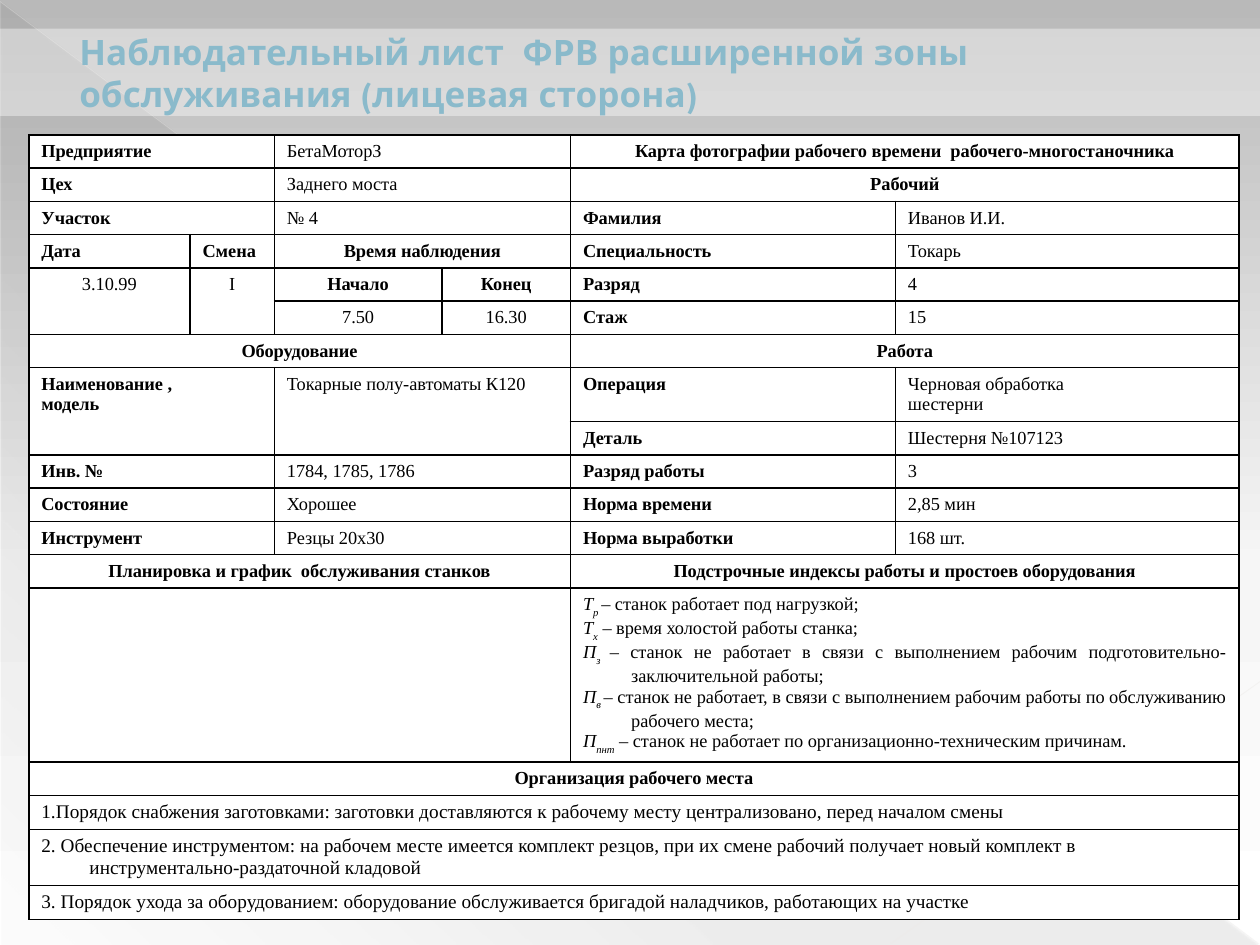
from lxml.etree import SubElement
from pptx import Presentation
from pptx.dml.color import RGBColor
from pptx.enum.shapes import MSO_CONNECTOR as Connector, MSO_SHAPE as Shape
from pptx.enum.text import MSO_ANCHOR as Anchor, PP_ALIGN as Align
from pptx.oxml.ns import qn
from pptx.util import Cm, Pt

COLUMN_WIDTHS = [3.25, 1.7, 3.38, 2.59, 6.55, 6.93]
ROW_HEIGHTS = [0.67] * 7 + [1.09] + [0.67] * 5 + [3.5, 0.67, 0.67, 1.13, 0.68]

LEFT_PAIRS = {
    0: ("Предприятие", "БетаМоторЗ"),
    1: ("Цех", "Заднего моста"),
    2: ("Участок", "№ 4"),
    7: ("Наименование ,\nмодель", "Токарные полу-автоматы К120"),
    9: ("Инв. №", "1784, 1785, 1786"),
    10: ("Состояние", "Хорошее"),
    11: ("Инструмент", "Резцы 20х30"),
}
RIGHT_PAIRS = {
    2: ("Фамилия", "Иванов И.И."),
    3: ("Специальность", "Токарь"),
    4: ("Разряд", "4"),
    5: ("Стаж", "15"),
    7: ("Операция", "Черновая обработка\nшестерни"),
    8: ("Деталь", "Шестерня №107123"),
    9: ("Разряд работы", "3"),
    10: ("Норма времени", "2,85 мин"),
    11: ("Норма выработки", "168 шт."),
}
HEADINGS = [
    (0, 4, 2, "Карта фотографии рабочего времени  рабочего-многостаночника"),
    (1, 4, 2, "Рабочий"),
    (3, 2, 2, "Время наблюдения"),
    (4, 2, 1, "Начало"),
    (4, 3, 1, "Конец"),
    (6, 0, 4, "Оборудование"),
    (6, 4, 2, "Работа"),
    (12, 0, 4, "Планировка и график  обслуживания станков"),
    (12, 4, 2, "Подстрочные индексы работы и простоев оборудования"),
    (14, 0, 6, "Организация рабочего места"),
]
SHIFT_VALUES = [(4, 0, 2, "3.10.99"), (4, 1, 2, "I"), (5, 2, 1, "7.50"), (5, 3, 1, "16.30")]
INDICES = [
    ("Т", "р ", "– станок работает под нагрузкой;"),
    ("Т", "х", " – время холостой работы станка;"),
    ("П", "з ", "– станок не работает в связи с выполнением рабочим "
                "подготовительно-заключительной работы;"),
    ("П", "в ", "– станок не работает, в связи с выполнением рабочим работы по "
                "обслуживанию рабочего места;"),
    ("П", "пнт", " – станок не работает по организационно-техническим причинам."),
]
WORKPLACE = [
    ("1.Порядок снабжения заготовками: заготовки доставляются к рабочему месту "
     "централизовано, перед началом смены", Align.JUSTIFY),
    ("2. Обеспечение инструментом: на рабочем месте имеется комплект резцов, при их смене "
     "рабочий получает новый комплект в инструментально-раздаточной кладовой", Align.LEFT),
    ("3. Порядок ухода за оборудованием: оборудование обслуживается бригадой наладчиков, "
     "работающих на участке", Align.LEFT),
]


def rgb(value):
    return RGBColor.from_string(value)


def paint(fill, color):
    fill.solid()
    fill.fore_color.rgb = rgb(color)


def set_opacity(element, percent):
    color = next(element.iter(qn("a:srgbClr")))
    SubElement(color, qn("a:alpha"), val=str(percent * 1000))


def make_gradient(solid, stops, angle):
    parent = solid.getparent()
    gradient = SubElement(parent, qn("a:gradFill"), rotWithShape="1")
    stop_list = SubElement(gradient, qn("a:gsLst"))
    for position, color, opacity in stops:
        stop = SubElement(stop_list, qn("a:gs"), pos=str(position * 1000))
        SubElement(stop, qn("a:srgbClr"), val=color)
        set_opacity(stop, opacity)
    SubElement(gradient, qn("a:lin"), ang=str(angle * 60000), scaled="0")
    parent.replace(solid, gradient)


def add_outline(properties, tag, color, width, position):
    outline = SubElement(properties, qn(tag), w=str(Pt(width)))
    fill = SubElement(outline, qn("a:solidFill"))
    SubElement(fill, qn("a:srgbClr"), val=color)
    properties.insert(position, outline)


def write(paragraph, text, *, size=10.5, font="Times New Roman", color="000000", bold=False,
          italic=False, baseline=0, align=Align.LEFT, indent=0.97, hanging=0.97):
    paragraph.alignment = align
    properties = paragraph._p.get_or_add_pPr()
    properties.set("marL", str(Cm(indent)))
    properties.set("indent", str(-Cm(hanging)))
    run = paragraph.add_run()
    run.text = text
    run.font.name, run.font.size = font, Pt(size)
    run.font.bold, run.font.italic = bold, italic
    run.font.color.rgb = rgb(color)
    if baseline:
        run._r.get_or_add_rPr().set("baseline", str(baseline * 1000))
    return run


class Sheet:
    border_color = "000000"
    cell_color = "FFFFFF"

    def __init__(self, slide):
        self.slide = slide

    def background(self, stops, angle):
        self.slide.background.fill.solid()
        properties = next(self.slide.element.iter(qn("p:bgPr")))
        make_gradient(properties.find(qn("a:solidFill")), stops, angle)
        properties.insert(0, properties.find(qn("a:gradFill")))

    def shape(self, kind, left, top, width, height, color="FFFFFF"):
        shape = self.slide.shapes.add_shape(kind, Cm(left), Cm(top), Cm(width), Cm(height))
        shape.shadow.inherit = False
        paint(shape.fill, color)
        shape.line.fill.background()
        return shape

    def line(self, start, end, color, width, opacity):
        line = self.slide.shapes.add_connector(
            Connector.STRAIGHT, *(Cm(value) for value in (*start, *end)))
        line.line.width = Pt(width)
        paint(line.line.fill, color)
        properties = line._element.spPr
        set_opacity(properties, opacity)
        SubElement(properties, qn("a:effectLst"))

    def title(self, text):
        band = self.shape(Shape.RECTANGLE, 0, 0.58, 25.4, 1.76)
        set_opacity(band._element.spPr, 40)
        frame = band.text_frame
        frame.word_wrap = True
        frame.vertical_anchor = Anchor.MIDDLE
        run = write(frame.paragraphs[0], text, size=20, font="League Spartan",
                    color="8ABACB", bold=True, indent=1.35, hanging=0)
        add_outline(run._r.get_or_add_rPr(), "a:ln", "4C6F7A", 0.5, 0)

    def table(self, left, top, widths, heights):
        self.grid = self.slide.shapes.add_table(
            len(heights), len(widths), Cm(left), Cm(top),
            Cm(sum(widths)), Cm(sum(heights))).table
        for column, width in zip(self.grid.columns, widths):
            column.width = Cm(width)
        for row, height in zip(self.grid.rows, heights):
            row.height = Cm(height)
        for cell in self.grid.iter_cells():
            paint(cell.fill, self.cell_color)
            properties = cell._tc.get_or_add_tcPr()
            for position, side in enumerate("LRTB"):
                add_outline(properties, f"a:ln{side}", self.border_color, 1, position)

    def merge(self, row, column, rows=1, columns=1):
        cell = self.grid.cell(row, column)
        if rows * columns > 1:
            cell.merge(self.grid.cell(row + rows - 1, column + columns - 1))
        return cell.text_frame

    def cell(self, row, column, text, rows=1, columns=1, **style):
        frame = self.merge(row, column, rows, columns)
        for number, part in enumerate(text.split("\n")):
            paragraph = frame.add_paragraph() if number else frame.paragraphs[0]
            write(paragraph, part, **style)

    def indices(self, row, column, entries):
        frame = self.merge(row, column, columns=2)
        for number, (symbol, subscript, meaning) in enumerate(entries):
            paragraph = frame.add_paragraph() if number else frame.paragraphs[0]
            write(paragraph, symbol, italic=True, align=Align.JUSTIFY)
            write(paragraph, subscript, italic=True, baseline=-30, align=Align.JUSTIFY)
            write(paragraph, meaning, align=Align.JUSTIFY)


def main():
    deck = Presentation()
    deck.slide_width, deck.slide_height = Cm(25.4), Cm(19.05)
    sheet = Sheet(deck.slides.add_slide(deck.slide_layouts[6]))

    sheet.background([(0, "B9B9B9", 100), (60, "F6F6F6", 100), (100, "FFFFFF", 100)], 90)
    corner = sheet.shape(Shape.RIGHT_TRIANGLE, 0.03, 0.05, 25.35, 19)
    make_gradient(corner._element.spPr.find(qn("a:solidFill")),
                  [(0, "3B3B3B", 10), (70, "3B3B3B", 8), (100, "3B3B3B", 1)], 133)
    sheet.line((0, 0.03), (25.37, 19.02), "EAE8E6", 0.39, 35)
    sheet.line((25.4, 13.74), (17.96, 19.02), "ECEAE8", 0.47, 45)
    sheet.title("Наблюдательный лист  ФРВ расширенной зоны обслуживания (лицевая сторона)")

    sheet.table(0.58, 2.72, COLUMN_WIDTHS, ROW_HEIGHTS)
    for row, (label, value) in LEFT_PAIRS.items():
        rows = 2 if row == 7 else 1
        sheet.cell(row, 0, label, rows, 2, bold=True)
        sheet.cell(row, 2, value, rows, 2)
    for row, (label, value) in RIGHT_PAIRS.items():
        sheet.cell(row, 4, label, bold=True)
        sheet.cell(row, 5, value)
    for column, label in enumerate(("Дата", "Смена")):
        sheet.cell(3, column, label, bold=True)
    for row, column, columns, heading in HEADINGS:
        sheet.cell(row, column, heading, columns=columns, bold=True, align=Align.CENTER)
    for row, column, rows, value in SHIFT_VALUES:
        sheet.cell(row, column, value, rows, align=Align.CENTER)
    sheet.merge(13, 0, columns=4)
    sheet.indices(13, 4, INDICES)
    for row, (rule, align) in enumerate(WORKPLACE, 15):
        sheet.cell(row, 0, rule, columns=6, size=11, align=align)

    deck.save("out.pptx")


if __name__ == "__main__":
    main()
